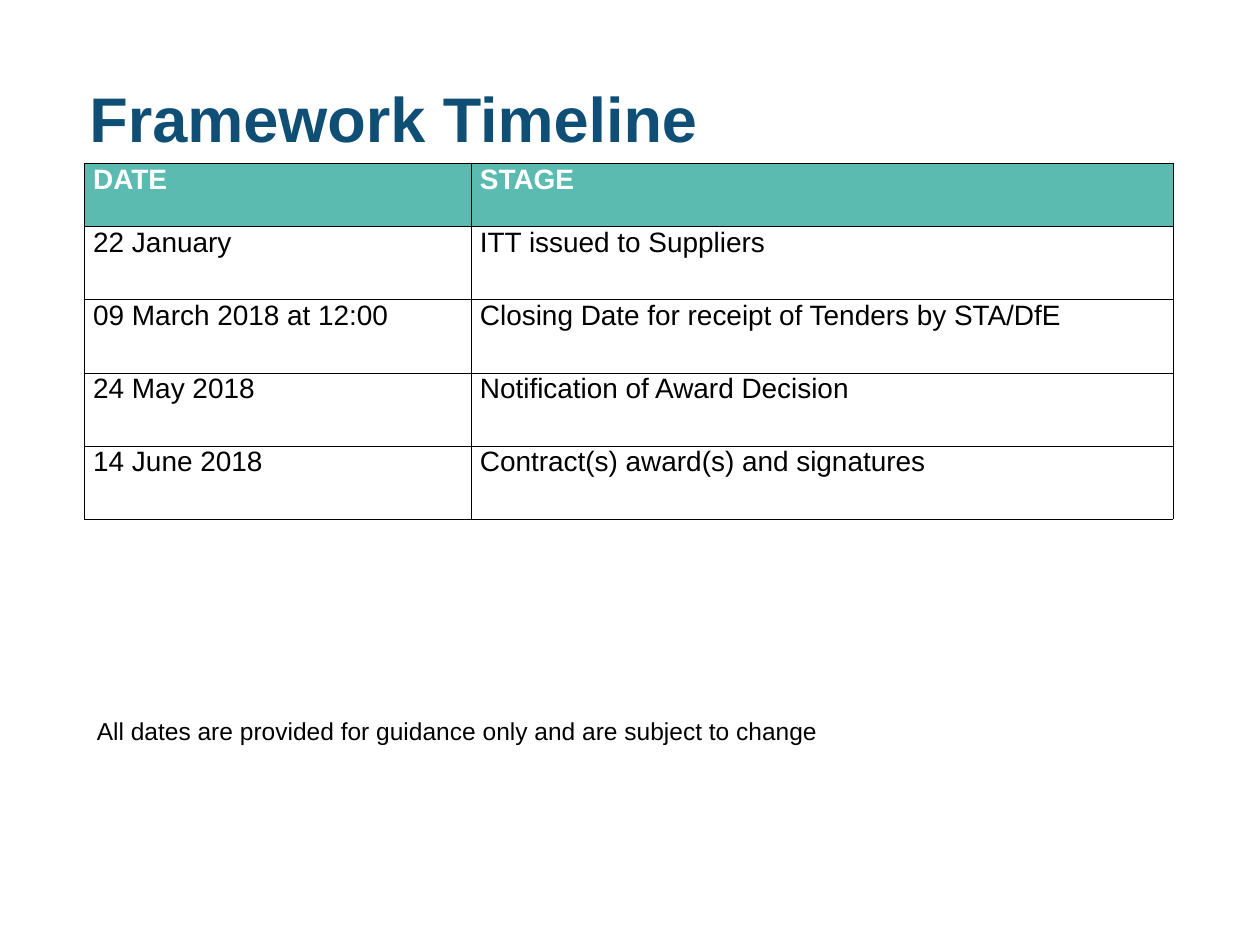
import pptx
import pptx.dml.color
import pptx.enum.text
import pptx.oxml
import pptx.oxml.ns
import pptx.util
from dataclasses import dataclass

Inches = pptx.util.Inches
Anchor = pptx.enum.text.MSO_ANCHOR


@dataclass(frozen=True)
class Theme:
    font: str = "Arial"
    navy: str = "104F75"
    teal: str = "5BBBB1"
    white: str = "FFFFFF"
    black: str = "000000"
    title_size: int = 36
    table_size: int = 16
    note_size: int = 14
    border_width: float = 0.5


class SlideBuilder:
    def __init__(self, slide, theme):
        self.slide = slide
        self.theme = theme

    def style_text(self, text_frame, size, color, bold=False):
        for paragraph in text_frame.paragraphs:
            for run in paragraph.runs:
                run.font.name = self.theme.font
                run.font.size = pptx.util.Pt(size)
                run.font.bold = bold
                run.font.color.rgb = pptx.dml.color.RGBColor.from_string(color)

    def set_margins(self, target, horizontal, vertical):
        target.margin_left = target.margin_right = Inches(horizontal)
        target.margin_top = target.margin_bottom = Inches(vertical)

    def add_title(self, text, left, top, width, height):
        title = self.slide.shapes.title
        title.left, title.top = Inches(left), Inches(top)
        title.width, title.height = Inches(width), Inches(height)
        text_frame = title.text_frame
        text_frame.text = text
        text_frame.word_wrap = True
        text_frame.vertical_anchor = Anchor.BOTTOM
        text_frame.paragraphs[0].alignment = pptx.enum.text.PP_ALIGN.LEFT
        self.set_margins(text_frame, 0, 0)
        self.style_text(text_frame, self.theme.title_size, self.theme.navy, bold=True)

    def add_borders(self, cell):
        properties = cell._tc.get_or_add_tcPr()
        width = pptx.util.Pt(self.theme.border_width)
        for index, side in enumerate(("lnL", "lnR", "lnT", "lnB")):
            border = pptx.oxml.parse_xml(
                f'<a:{side} {pptx.oxml.ns.nsdecls("a")} w="{width}"><a:solidFill>'
                f'<a:srgbClr val="{self.theme.black}"/></a:solidFill></a:{side}>'
            )
            properties.insert(index, border)

    def add_table(self, rows, left, top, column_widths, row_heights):
        frame = self.slide.shapes.add_table(
            len(rows), len(column_widths), Inches(left), Inches(top),
            Inches(sum(column_widths)), Inches(sum(row_heights)),
        )
        table = frame.table
        table.horz_banding = False
        for column, width in zip(table.columns, column_widths):
            column.width = Inches(width)
        for row_index, (row, height) in enumerate(zip(rows, row_heights)):
            table.rows[row_index].height = Inches(height)
            is_header = row_index == 0
            fill_color = self.theme.teal if is_header else self.theme.white
            text_color = self.theme.white if is_header else self.theme.black
            for column_index, text in enumerate(row):
                cell = table.cell(row_index, column_index)
                cell.text_frame.text = text
                cell.vertical_anchor = Anchor.TOP
                self.set_margins(cell, 0.07, 0)
                cell.fill.solid()
                cell.fill.fore_color.rgb = pptx.dml.color.RGBColor.from_string(fill_color)
                self.style_text(cell.text_frame, self.theme.table_size, text_color, is_header)
                self.add_borders(cell)

    def add_note(self, text, left, top, width, height):
        box = self.slide.shapes.add_textbox(
            Inches(left), Inches(top), Inches(width), Inches(height)
        )
        text_frame = box.text_frame
        text_frame.text = text
        text_frame.word_wrap = False
        text_frame.auto_size = pptx.enum.text.MSO_AUTO_SIZE.SHAPE_TO_FIT_TEXT
        self.style_text(text_frame, self.theme.note_size, self.theme.black)


def main():
    presentation = pptx.Presentation()
    presentation.slide_width = Inches(10)
    presentation.slide_height = Inches(7.5)
    slide = presentation.slides.add_slide(presentation.slide_layouts.get_by_name("Title Only"))
    builder = SlideBuilder(slide, Theme())

    # Title
    builder.add_title("Framework Timeline", 0.71, 0.6, 7.44, 0.63)

    # Timeline table: a header and four equal rows
    timeline = [
        ("DATE", "STAGE"),
        ("22 January", "ITT issued to Suppliers"),
        ("09 March 2018 at 12:00", "Closing Date for receipt of Tenders by STA/DfE"),
        ("24 May 2018", "Notification of Award Decision"),
        ("14 June 2018", "Contract(s) award(s) and signatures"),
    ]
    row_heights = [0.5] + [0.58] * (len(timeline) - 1)
    builder.add_table(timeline, 0.67, 1.3, [3.07, 5.57], row_heights)

    # Note below the table
    builder.add_note(
        "All dates are provided for guidance only and are subject to change",
        0.67, 5.63, 5.94, 0.34,
    )

    presentation.save("out.pptx")


if __name__ == "__main__":
    main()
